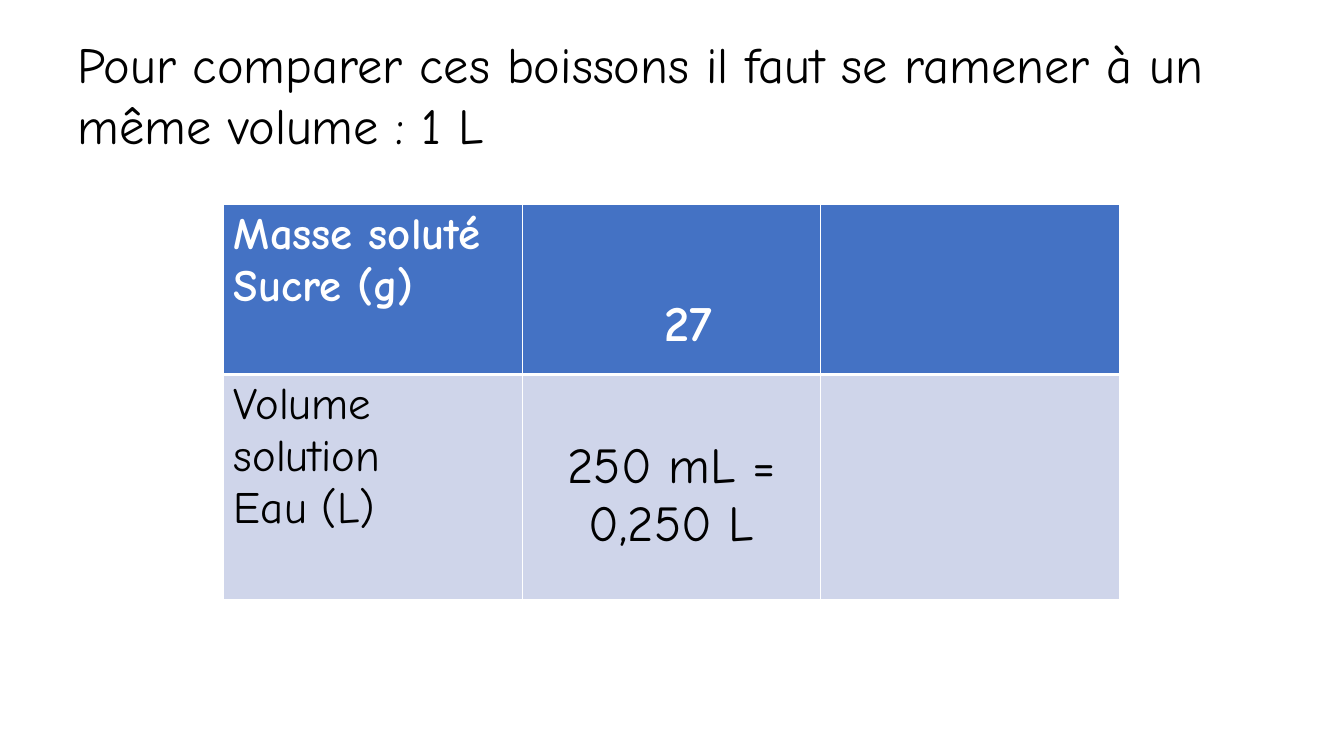
from lxml import etree
from pptx import Presentation
from pptx import util as u
from pptx.dml.color import RGBColor
from pptx.enum import text
from pptx.oxml.ns import qn

FONT = "Comic Neue"
WHITE, BLACK, BLUE, PALE = "FFFFFF", "000000", "4472C4", "CFD5EA"
TITLE_BOX = (0.67, 0.28, 12.32, 1.31)
TABLE_BOX = (2.22, 2.03, 8.88, 3.92)
ROW_SHARES = (0.43, 0.57)
LABEL = {"size": 32, "align": text.PP_ALIGN.LEFT, "margins": {}}
ROWS = [
    {"fill": BLUE, "color": WHITE, "bold": True, "bottom": 3,
     "cells": [(["Masse soluté", "Sucre (g)"], LABEL),
               (["27"], {"size": 36, "align": text.PP_ALIGN.CENTER,
                         "margins": {"margin_top": 0.91, "margin_left": 0.44}}),
               ([], LABEL)]},
    {"fill": PALE, "color": BLACK, "bold": False, "bottom": 1,
     "cells": [(["Volume solution", "Eau (L)"], LABEL),
               (["250 mL = 0,250 L"], {"size": 36, "align": text.PP_ALIGN.CENTER,
                                       "margins": {"margin_top": 0.63}}),
               ([], LABEL)]},
]


def rgb(color):
    return RGBColor.from_string(color)


def style_font(font, size, color, bold=False):
    values = {"name": FONT, "size": u.Pt(size), "bold": bold}
    for name, value in values.items():
        setattr(font, name, value)
    font.color.rgb = rgb(color)


def add_borders(cell, widths):
    """Draw white cell edges; widths maps each side to points."""
    properties = cell._tc.get_or_add_tcPr()
    for side, width in widths.items():
        line = etree.SubElement(properties, qn(f"a:ln{side}"), w=str(u.Pt(width)))
        fill = etree.SubElement(line, qn("a:solidFill"))
        etree.SubElement(fill, qn("a:srgbClr"), val=WHITE)


def fill_cell(cell, lines, row, style):
    cell.fill.solid()
    cell.fill.fore_color.rgb = rgb(row["fill"])
    for name, value in style["margins"].items():
        setattr(cell, name, u.Inches(value))
    if not lines:
        return
    cell.text = "\n".join(lines)
    for paragraph in cell.text_frame.paragraphs:
        paragraph.alignment = style["align"]
        for run in paragraph.runs:
            style_font(run.font, style["size"], row["color"], row["bold"])


def add_title(slide, box):
    title = slide.shapes.title
    for name, value in zip(("left", "top", "width", "height"), box):
        setattr(title, name, u.Inches(value))
    frame = title.text_frame
    frame.text = "Pour comparer ces boissons il faut se ramener à un même volume : 1 L"
    frame.word_wrap = True
    frame.auto_size = text.MSO_AUTO_SIZE.SHAPE_TO_FIT_TEXT
    frame.vertical_anchor = text.MSO_ANCHOR.TOP
    paragraph = frame.paragraphs[0]
    paragraph.alignment = text.PP_ALIGN.LEFT
    style_font(paragraph.runs[0].font, 36, BLACK)


def add_comparison_table(slide, box):
    columns = len(ROWS[0]["cells"])
    frame = slide.shapes.add_table(len(ROWS), columns, *map(u.Inches, box))
    table = frame.table
    for column in table.columns:
        column.width = u.Inches(box[2] / columns)
    top_width = 1
    for index, (row, share) in enumerate(zip(ROWS, ROW_SHARES)):
        table.rows[index].height = u.Inches(box[3] * share)
        for cell, (lines, style) in zip(table.rows[index].cells, row["cells"]):
            add_borders(cell, {"L": 1, "R": 1, "T": top_width, "B": row["bottom"]})
            fill_cell(cell, lines, row, style)
        top_width = row["bottom"]


def main():
    presentation = Presentation()
    presentation.slide_width = u.Inches(13.33)
    presentation.slide_height = u.Inches(7.5)
    slide = presentation.slides.add_slide(presentation.slide_layouts[5])
    add_title(slide, TITLE_BOX)
    add_comparison_table(slide, TABLE_BOX)
    presentation.save("out.pptx")


if __name__ == "__main__":
    main()
